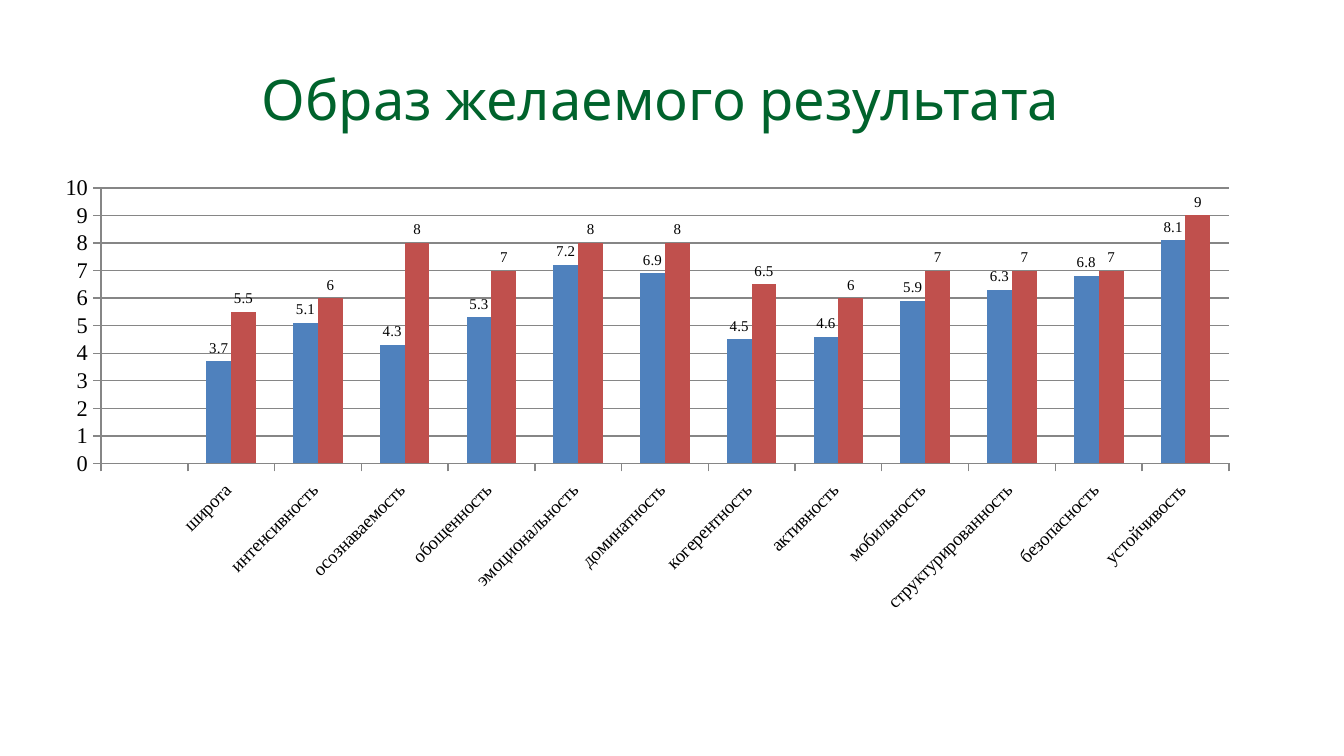
from pptx import Presentation
from pptx.chart.data import CategoryChartData as Data
from pptx.dml.color import RGBColor as RGB
from pptx.enum.chart import XL_CHART_TYPE as Kind, XL_LABEL_POSITION as Spot, XL_TICK_MARK as Tick
from pptx.enum.text import MSO_ANCHOR as Anchor, PP_ALIGN as Align
from pptx.oxml import parse_xml
from pptx.oxml.ns import nsdecls
from pptx.util import Pt

HUES = {"title": "00632C", "text": "000000", "grid": "868686",
        "now": "4F81BD", "goal": "C0504D"}
SERIF = "Times New Roman"
PLOT = {"x": 0.038, "y": 0.134, "w": 0.95, "h": 0.547}
# trait, present score, desired score; the end space sets the slanted label off the axis
SCORES = [
    ("", None, None),
    ("широта ", 3.7, 5.5),
    ("интенсивность ", 5.1, 6),
    ("осознаваемость ", 4.3, 8),
    ("обощенность ", 5.3, 7),
    ("эмоциональность ", 7.2, 8),
    ("доминатность ", 6.9, 8),
    ("когерентность ", 4.5, 6.5),
    ("активность ", 4.6, 6),
    ("мобильность ", 5.9, 7),
    ("структурированность ", 6.3, 7),
    ("безопасность ", 6.8, 7),
    ("устойчивость ", 8.1, 9),
]


def style(font, size, face=SERIF, hue="text"):
    font.size, font.name = Pt(size), face
    font.color.rgb = RGB.from_string(HUES[hue])


def write(frame, text, align=Align.CENTER, **look):
    frame.margin_left = frame.margin_right = frame.margin_top = frame.margin_bottom = 0
    frame.word_wrap = True
    frame.vertical_anchor = Anchor.TOP
    para = frame.paragraphs[0]
    para.alignment = align
    run = para.add_run()
    run.text = text
    style(run.font, **look)


def add_title(slide, text):
    title = slide.shapes.title
    title.left, title.top, title.width, title.height = Pt(108), Pt(34.5), Pt(492), Pt(36)
    write(title.text_frame, text, size=30, face="Karla", hue="title")


def draw_line(line):
    line.color.rgb = RGB.from_string(HUES["grid"])
    line.width = Pt(0.75)


def set_axis(axis, size):
    axis.major_tick_mark, axis.minor_tick_mark = Tick.OUTSIDE, Tick.NONE
    style(axis.tick_labels.font, size)
    draw_line(axis.format.line)


def set_series(series, hue):
    series.format.fill.solid()
    series.format.fill.fore_color.rgb = RGB.from_string(HUES[hue])
    series.invert_if_negative = False
    labels = series.data_labels
    labels.show_value = True
    labels.position = Spot.OUTSIDE_END
    style(labels.font, 8)


def place_plot(chart):
    """Fix the inner plot area as fractions of the chart."""
    area = chart.plots[0]._element.getparent()
    for old in area.findall("{*}layout"):
        area.remove(old)
    sizes = "".join(f'<c:{key} val="{val}"/>' for key, val in PLOT.items())
    area.insert(0, parse_xml(
        f'<c:layout {nsdecls("c")}><c:manualLayout><c:layoutTarget val="inner"/>'
        f'<c:xMode val="edge"/><c:yMode val="edge"/>{sizes}</c:manualLayout></c:layout>'))


def slant(axis):
    """Turn the tick labels up by 45 degrees."""
    axis._element.find("{*}txPr/{*}bodyPr").set("rot", "-2700000")


def add_bars(slide):
    traits, now, goal = zip(*SCORES)
    data = Data()
    data.categories = traits
    data.add_series("Series 1", now)
    data.add_series("Series 2", goal)
    chart = slide.shapes.add_chart(Kind.COLUMN_CLUSTERED, Pt(30), Pt(64.5), Pt(636), Pt(270), data).chart
    chart.has_legend = chart.has_title = False
    style(chart.font, 12)
    plot = chart.plots[0]
    plot.gap_width, plot.overlap, plot.vary_by_categories = 150, 0, False
    for series, hue in zip(plot.series, ("now", "goal")):
        set_series(series, hue)

    set_axis(chart.category_axis, 10)
    slant(chart.category_axis)
    scale = chart.value_axis
    set_axis(scale, 12)
    scale.minimum_scale, scale.maximum_scale, scale.major_unit = 0, 10, 1
    scale.has_major_gridlines = True
    draw_line(scale.major_gridlines.format.line)
    place_plot(chart)


def main():
    deck = Presentation()
    deck.slide_width, deck.slide_height = Pt(720), Pt(405)
    slide = deck.slides.add_slide(deck.slide_layouts[5])
    add_title(slide, "Образ желаемого результата")
    add_bars(slide)
    deck.save("out.pptx")


if __name__ == "__main__":
    main()
